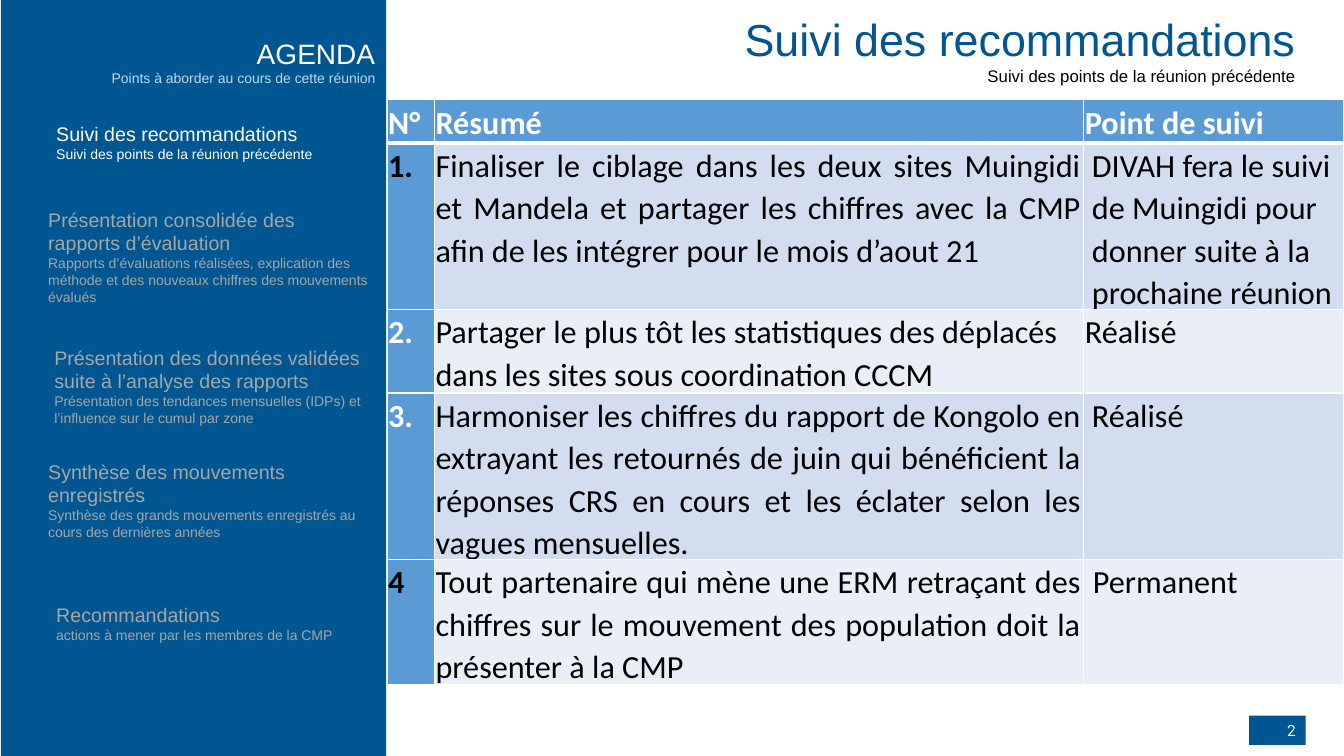
from dataclasses import dataclass

from lxml.etree import SubElement
from pptx import Presentation
from pptx.dml.color import RGBColor
from pptx.enum.shapes import MSO_SHAPE as Preset
from pptx.enum.text import MSO_ANCHOR as Anchor, PP_ALIGN as Align
from pptx.oxml.ns import qn
from pptx.util import Inches, Pt


@dataclass(frozen=True)
class Theme:
    blue: str = "005691"
    white: str = "FFFFFF"
    black: str = "000000"
    muted: str = "A6A6A6"
    pale: str = "BDD7EE"
    header: str = "5B9BD5"
    bands: tuple = ("D2DEEF", "EAEFF7")
    font: str = "Arial"
    table_font: str = "Calibri"
    number_font: str = "Roboto"
    title: float = 32
    subtitle: float = 12
    agenda: float = 20
    topic: float = 14
    detail: float = 10
    cell: float = 23
    number: float = 11


THEME = Theme()

# Agenda topics: left, top, height, heading, detail
TOPICS = [
    (0.46, 1.16, 0.5, "Suivi des recommandations",
     "Suivi des points de la réunion précédente"),
    (0.38, 2.01, 1.08, "Présentation consolidée des rapports d’évaluation",
     "Rapports d’évaluations réalisées, explication des méthode et des "
     "nouveaux chiffres des mouvements évalués"),
    (0.44, 3.38, 0.91,
     "Présentation des données validées suite à l’analyse des rapports",
     "Présentation des tendances mensuelles (IDPs) et l’influence sur le "
     "cumul par zone"),
    (0.38, 4.51, 0.91, "Synthèse des mouvements enregistrés",
     "Synthèse des grands mouvements enregistrés au cours des dernières années"),
    (0.46, 5.93, 0.5, "Recommandations",
     "actions à mener par les membres de la CMP"),
]

HEADINGS = ("N°", "Résumé", "Point de suivi")
COLUMN_WIDTHS = (0.47, 6.44, 2.58)
ROW_HEIGHTS = (0.43, 1.64, 0.82, 1.65, 1.24)

# Follow-up rows: number, its colour, summary, its alignment, status, indent
FOLLOW_UPS = [
    ("1.", THEME.black,
     "Finaliser le ciblage dans les deux sites Muingidi et Mandela et partager "
     "les chiffres avec la CMP afin de les intégrer pour le mois d’aout 21",
     Align.JUSTIFY,
     "DIVAH fera le suivi de Muingidi pour donner suite à la prochaine réunion",
     0.07),
    ("2.", THEME.white,
     "Partager le plus tôt les statistiques des déplacés dans les sites sous "
     "coordination CCCM", Align.LEFT, "Réalisé", 0),
    ("3.", THEME.white,
     "Harmoniser les chiffres du rapport de Kongolo en extrayant les retournés "
     "de juin qui bénéficient la réponses CRS en cours et les éclater selon "
     "les vagues mensuelles.", Align.JUSTIFY, "Réalisé", 0.07),
    ("4", THEME.black,
     "Tout partenaire qui mène une ERM retraçant des chiffres sur le mouvement "
     "des population doit la présenter à la CMP",
     Align.JUSTIFY, "Permanent", 0.08),
]


def write(para, text, *, size, color, font=THEME.font, bold=False,
          align=Align.LEFT, before=0, after=0, spacing=None, indent=0):
    """Fill one paragraph with formatted text."""
    para.alignment = align
    para.space_before, para.space_after = Pt(before), Pt(after)
    if spacing:
        para.line_spacing = spacing
    if indent:
        para._p.get_or_add_pPr().set("marL", str(Inches(indent)))
    span = para.add_run()
    span.text = text
    span.font.size, span.font.name, span.font.bold = Pt(size), font, bold
    span.font.color.rgb = RGBColor.from_string(color)


def add_block(page, left, top, width, height, color):
    block = page.shapes.add_shape(Preset.RECTANGLE, Inches(left), Inches(top),
                                  Inches(width), Inches(height))
    block.shadow.inherit = False
    block.fill.solid()
    block.fill.fore_color.rgb = RGBColor.from_string(color)
    block.line.fill.background()
    return block


def add_heading(page, area, heading, detail, *, sizes, colors, align=Align.LEFT):
    """Add a heading with a smaller line of detail under it."""
    box = page.shapes.add_textbox(*map(Inches, area))
    frame = box.text_frame
    frame.word_wrap = True
    write(frame.paragraphs[0], heading, size=sizes[0], color=colors[0],
          align=align, before=sizes[0] / 10)
    write(frame.add_paragraph(), detail, size=sizes[1], color=colors[1],
          align=align)


def add_borders(cell, bottom):
    properties = cell._tc.get_or_add_tcPr()
    for side, width in (("L", 1), ("R", 1), ("T", 1), ("B", bottom)):
        line = SubElement(properties, qn(f"a:ln{side}"), w=str(Pt(width)))
        fill = SubElement(line, qn("a:solidFill"))
        SubElement(fill, qn("a:srgbClr"), val=THEME.white)


def fill_cell(cell, text, fill, *, bottom=1, **style):
    add_borders(cell, bottom)
    cell.fill.solid()
    cell.fill.fore_color.rgb = RGBColor.from_string(fill)
    cell.margin_left = cell.margin_top = Inches(0.01)
    cell.margin_right, cell.margin_bottom = Inches(0.02), 0
    write(cell.text_frame.paragraphs[0], text, size=THEME.cell,
          font=THEME.table_font, spacing=1.07, after=8, **style)


def add_follow_up_table(page, left, top):
    frame = page.shapes.add_table(
        len(ROW_HEIGHTS), len(COLUMN_WIDTHS), Inches(left), Inches(top),
        Inches(sum(COLUMN_WIDTHS)), Inches(sum(ROW_HEIGHTS)))
    table = frame.table
    table.horz_banding = False
    for column, width in zip(table.columns, COLUMN_WIDTHS):
        column.width = Inches(width)
    for row, height in zip(table.rows, ROW_HEIGHTS):
        row.height = Inches(height)

    for index, text in enumerate(HEADINGS):
        fill_cell(table.cell(0, index), text, THEME.header, bottom=3,
                  color=THEME.white, bold=True)
    for row, follow_up in enumerate(FOLLOW_UPS, start=1):
        number, color, summary, align, status, indent = follow_up
        band = THEME.bands[(row - 1) % 2]
        fill_cell(table.cell(row, 0), number, THEME.header, color=color, bold=True)
        fill_cell(table.cell(row, 1), summary, band, color=THEME.black, align=align)
        fill_cell(table.cell(row, 2), status, band, color=THEME.black, indent=indent)


def add_page_number(page, number):
    block = add_block(page, 12.39, 7.1, 0.56, 0.29, THEME.blue)
    block.text_frame.vertical_anchor = Anchor.MIDDLE
    write(block.text_frame.paragraphs[0], number, size=THEME.number,
          font=THEME.number_font, color=THEME.white, align=Align.RIGHT)


def main():
    deck = Presentation()
    deck.slide_width, deck.slide_height = Inches(13.33), Inches(7.5)
    page = deck.slides.add_slide(deck.slide_layouts[6])

    # Sidebar with the agenda, current topic highlighted
    add_block(page, 0.01, 0, 3.82, 7.5, THEME.blue)
    add_heading(page, (0, 0.31, 3.82, 0.26), "AGENDA",
                "Points à aborder au cours de cette réunion",
                sizes=(THEME.agenda, THEME.detail),
                colors=(THEME.white, THEME.pale), align=Align.RIGHT)
    for index, (left, top, height, heading, detail) in enumerate(TOPICS):
        color = THEME.muted if index else THEME.white
        add_heading(page, (left, top, 3.37, height), heading, detail,
                    sizes=(THEME.topic, THEME.detail), colors=(color, color))

    # Title, follow-up table and page number
    add_heading(page, (4.18, 0.07, 8.77, 0.84), *TOPICS[0][3:],
                sizes=(THEME.title, THEME.subtitle),
                colors=(THEME.blue, THEME.black), align=Align.RIGHT)
    add_follow_up_table(page, 3.84, 0.99)
    add_page_number(page, "2")

    deck.save("out.pptx")


if __name__ == "__main__":
    main()
